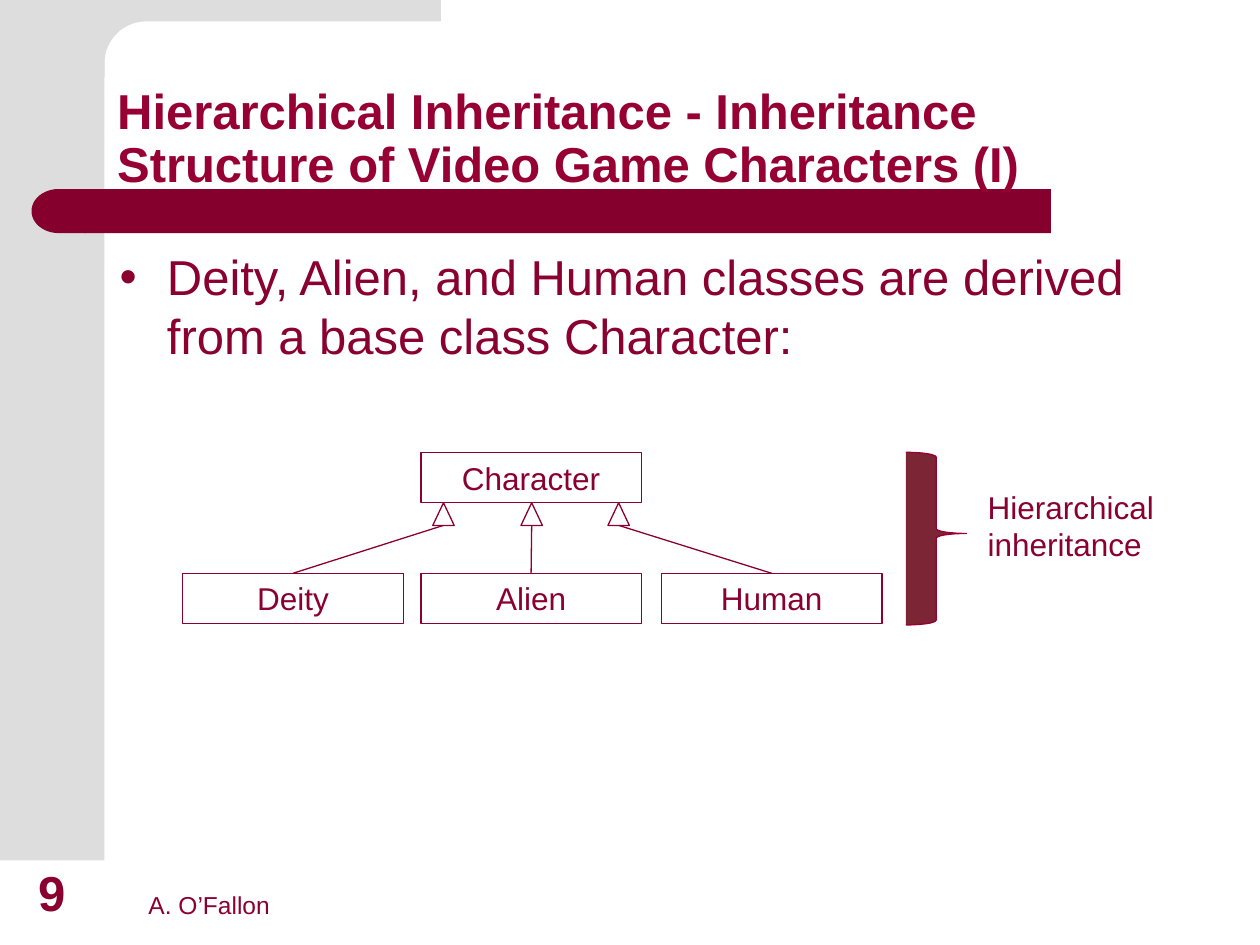
from math import cos, pi, sin

from lxml import etree
from pptx import Presentation
from pptx.dml.color import RGBColor
from pptx.enum.shapes import MSO_CONNECTOR, MSO_SHAPE
from pptx.enum.text import MSO_ANCHOR, MSO_AUTO_SIZE, PP_ALIGN
from pptx.oxml.ns import qn
from pptx.util import Inches, Pt

LEFT, CENTER = PP_ALIGN.LEFT, PP_ALIGN.CENTER
TOP, BOTTOM = MSO_ANCHOR.TOP, MSO_ANCHOR.BOTTOM
RECTANGLE, TRIANGLE = MSO_SHAPE.RECTANGLE, MSO_SHAPE.ISOSCELES_TRIANGLE
DELAY, BRACE = MSO_SHAPE.FLOWCHART_DELAY, MSO_SHAPE.RIGHT_BRACE
STRAIGHT = MSO_CONNECTOR.STRAIGHT
NO_AUTOFIT = MSO_AUTO_SIZE.NONE


def color(value):
    return RGBColor.from_string(value)


class SlideBuilder:
    font_name = "Arial"
    ink = "8A002E"
    title_ink = "960032"
    bar = "86002D"
    panel = "DDDDDD"
    brace_fill = "7B2535"
    line_width = 0.75

    def __init__(self, slide):
        self.slide = slide

    def paint(self, shape, fill=None, line=None):
        shape.shadow.inherit = False
        if fill:
            shape.fill.solid()
            shape.fill.fore_color.rgb = color(fill)
        else:
            shape.fill.background()
        if line:
            shape.line.color.rgb = color(line)
            shape.line.width = Pt(self.line_width)
        else:
            shape.line.fill.background()

    def shape(self, kind, left, top, width, height, fill=None, line=None):
        shape = self.slide.shapes.add_shape(
            kind, Inches(left), Inches(top), Inches(width), Inches(height))
        self.paint(shape, fill, line)
        return shape

    def polygon(self, points, fill):
        (start_x, start_y), *others = points
        builder = self.slide.shapes.build_freeform(
            Inches(start_x), Inches(start_y))
        builder.add_line_segments([(Inches(x), Inches(y)) for x, y in others])
        self.paint(builder.convert_to_shape(), fill)

    def set_text(self, shape, text, size, ink=None, bold=False,
                 align=LEFT, anchor=TOP):
        frame = shape.text_frame
        frame.word_wrap = True
        frame.auto_size = NO_AUTOFIT
        frame.vertical_anchor = anchor
        frame.text = text
        paragraph = frame.paragraphs[0]
        paragraph.alignment = align
        paragraph.font.name = self.font_name
        paragraph.font.size = Pt(size)
        paragraph.font.bold = bold
        paragraph.font.color.rgb = color(ink or self.ink)
        return paragraph

    def place(self, shape, left, top, width, height):
        shape.left, shape.top = Inches(left), Inches(top)
        shape.width, shape.height = Inches(width), Inches(height)

    def title(self, text, *box):
        title = self.slide.shapes.title
        self.place(title, *box)
        paragraph = self.set_text(title, text, 28, self.title_ink, True,
                                  anchor=BOTTOM)
        paragraph.line_spacing = 0.9

    def bullet(self, text, *box):
        body = self.slide.placeholders[1]
        self.place(body, *box)
        paragraph = body.text_frame.paragraphs[0]
        paragraph.space_before = Pt(0)
        properties = paragraph._p.get_or_add_pPr()
        properties.set("marL", str(Inches(0.38)))
        properties.set("indent", str(Inches(-0.38)))
        bullet_color = etree.SubElement(properties, qn("a:buClr"))
        etree.SubElement(bullet_color, qn("a:srgbClr"), val=self.ink)
        etree.SubElement(properties, qn("a:buSzPct"), val="75000")
        etree.SubElement(properties, qn("a:buFont"), typeface=self.font_name)
        etree.SubElement(properties, qn("a:buChar"), char="●")
        self.set_text(body, text, 28)

    def label(self, text, left, top, width, height, size, **style):
        box = self.slide.shapes.add_textbox(
            Inches(left), Inches(top), Inches(width), Inches(height))
        self.set_text(box, text, size, **style)

    def class_box(self, name, left, top, width, height):
        box = self.shape(RECTANGLE, left, top, width, height, line=self.ink)
        self.set_text(box, name, 18, align=CENTER)

    def inheritance_arrow(self, tip_x, tip_y, from_x, from_y):
        """Draw a hollow triangle at the base class and a line to the subclass."""
        width, height = 0.17, 0.18
        self.shape(TRIANGLE, tip_x - width / 2, tip_y, width, height,
                   line=self.ink)
        connector = self.slide.shapes.add_connector(
            STRAIGHT, Inches(tip_x), Inches(tip_y + height),
            Inches(from_x), Inches(from_y))
        connector.line.color.rgb = color(self.ink)
        connector.line.width = Pt(self.line_width)
        etree.SubElement(connector._element.spPr, qn("a:effectLst"))

    def background(self):
        self.shape(RECTANGLE, 0, 0, 0.83, 6.83, self.panel)
        radius, steps = 0.33, 16
        angles = [pi / 2 * step / steps for step in range(steps + 1)]
        corner = [(1.16 - radius * sin(angle), 0.5 - radius * cos(angle))
                  for angle in angles]
        self.polygon([(0.5, 0), (3.5, 0), (3.5, 0.17), *corner,
                      (0.83, 0.61), (0.5, 0.61)], self.panel)
        self.shape(RECTANGLE, 0.67, 1.5, 7.67, 0.35, self.bar)
        cap = self.shape(DELAY, 0.25, 1.5, 0.43, 0.35, self.bar)
        cap.rotation = 180

    def class_diagram(self):
        width, height = 1.75, 0.4
        base_top, derived_top = 3.59, 4.55
        self.class_box("Character", 3.34, base_top, width, height)
        derived = [("Deity", 1.45, 3.52), ("Alien", 3.34, 4.22),
                   ("Human", 5.25, 4.91)]
        for name, left, tip_x in derived:
            self.class_box(name, left, derived_top, width, height)
            self.inheritance_arrow(tip_x, base_top + height,
                                   left + width / 2, derived_top)
        brace = self.shape(BRACE, 7.19, base_top, 0.48, 1.37,
                           self.brace_fill, self.title_ink)
        brace.adjustments[0] = 0.08
        brace.adjustments[1] = 0.47
        self.label("Hierarchical inheritance", 7.74, 3.82, 1.6, 0.71, 18)


def main():
    presentation = Presentation()
    presentation.slide_width = Inches(10)
    presentation.slide_height = Inches(7.5)
    slide = presentation.slides.add_slide(presentation.slide_layouts[1])
    builder = SlideBuilder(slide)
    builder.background()
    builder.title("Hierarchical Inheritance - Inheritance Structure of "
                  "Video Game Characters (I)", 0.83, 0.33, 8.67, 1.25)
    builder.bullet("Deity, Alien, and Human classes are derived from a base "
                   "class Character:", 0.85, 1.91, 8.41, 4.07)
    builder.label("A. O’Fallon", 1.08, 6.83, 3.75, 0.52, 14, anchor=BOTTOM)
    builder.label("9", 0.09, 6.83, 0.64, 0.53, 28, bold=True,
                  align=CENTER, anchor=BOTTOM)
    builder.class_diagram()
    # The title overlaps the bar, so the placeholders go above the background.
    shape_tree = slide.shapes._spTree
    for placeholder in list(slide.placeholders):
        shape_tree.append(placeholder._element)
    presentation.save("out.pptx")


if __name__ == "__main__":
    main()
